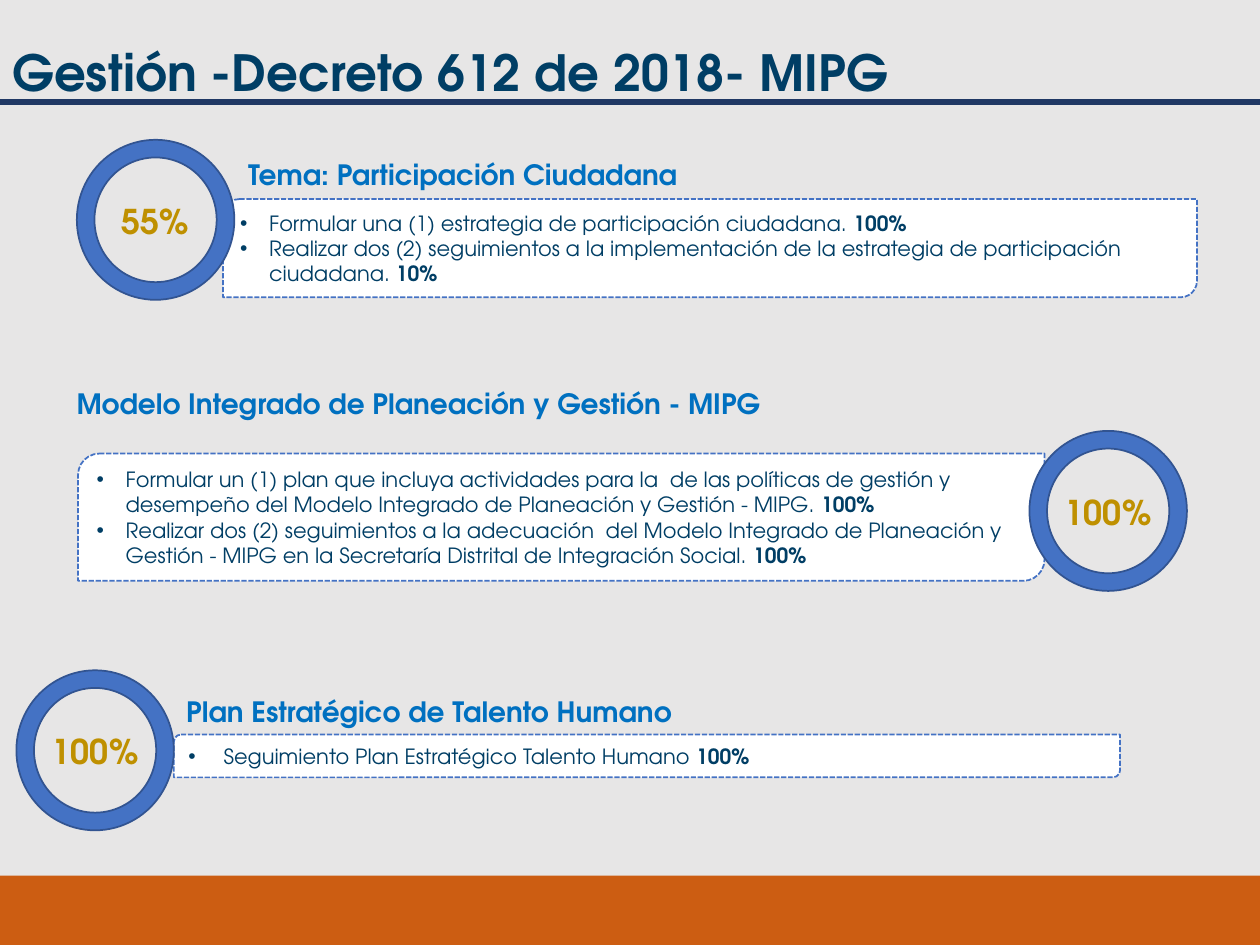
from lxml.etree import SubElement
from pptx import Presentation
from pptx.dml.color import RGBColor
from pptx.enum.dml import MSO_LINE
from pptx.enum.shapes import MSO_CONNECTOR, MSO_SHAPE
from pptx.enum.text import MSO_ANCHOR, PP_ALIGN
from pptx.oxml.ns import qn
from pptx.util import Inches, Pt

PALE_GREY = RGBColor(0xE7, 0xE6, 0xE6)
WHITE = RGBColor(0xFF, 0xFF, 0xFF)
ORANGE = RGBColor(0xCC, 0x5D, 0x12)
NAVY = RGBColor(0x20, 0x38, 0x64)
DEEP_BLUE = RGBColor(0x00, 0x3E, 0x65)
BRIGHT_BLUE = RGBColor(0x00, 0x70, 0xC0)
RING_BLUE = RGBColor(0x44, 0x72, 0xC4)
RING_EDGE = RGBColor(0x32, 0x54, 0x91)
GOLD = RGBColor(0xBF, 0x90, 0x00)

COLUMNS, ROWS = 100, 75
RING_COLUMNS, RING_ROWS = 12.5, 12.7
HEADING_ROWS = 3.7

TOPICS = [
    {
        "heading": ("Tema: Participación Ciudadana", 18.7, 12, 71.5),
        "ring": ("55%", 6.1, 11.1),
        "box": (17.7, 15.8, 77.3, 7.8),
        "indent": 0.23,
        "goals": [
            ("Formular una (1) estrategia de participación ciudadana. ", "100%"),
            ("Realizar dos (2) seguimientos a la implementación de la estrategia "
             "de participación ciudadana. ", "10%"),
        ],
    },
    {
        "heading": ("Modelo Integrado de Planeación y Gestión - MIPG", 5.1, 30.2, 80),
        "ring": ("100%", 81.7, 34.2),
        "box": (6.2, 36, 76.7, 10.1),
        "indent": 0.23,
        "goals": [
            ("Formular un (1) plan que incluya actividades para la  de las políticas "
             "de gestión y desempeño del Modelo Integrado de Planeación y Gestión - MIPG. ",
             "100%"),
            ("Realizar dos (2) seguimientos a la adecuación  del Modelo Integrado de "
             "Planeación y Gestión - MIPG en la Secretaría Distrital de Integración Social. ",
             "100%"),
        ],
    },
    {
        "heading": ("Plan Estratégico de Talento Humano", 13.8, 54.6, 64),
        "ring": ("100%", 1.3, 53.2),
        "box": (13.8, 58.3, 75.1, 3.4),
        "indent": 0.28,
        "goals": [("Seguimiento Plan Estratégico Talento Humano ", "100%")],
    },
]


class SlideBuilder:
    font_name = "TeX Gyre Adventor"

    def __init__(self, presentation):
        self.column = presentation.slide_width / COLUMNS
        self.row = presentation.slide_height / ROWS
        self.slide = presentation.slides.add_slide(presentation.slide_layouts[6])
        self.slide.background.fill.solid()
        self.slide.background.fill.fore_color.rgb = PALE_GREY

    def place(self, left, top, width, height):
        return (round(left * self.column), round(top * self.row),
                round(width * self.column), round(height * self.row))

    def style(self, paragraph, size, color, bold=None):
        paragraph.font.name = self.font_name
        paragraph.font.size = Pt(size)
        paragraph.font.color.rgb = color
        paragraph.font.bold = bold

    def shape(self, kind, area, fill, edge=None, parent=None):
        shape = (parent or self.slide).shapes.add_shape(kind, *self.place(*area))
        shape.shadow.inherit = False
        shape.fill.solid()
        shape.fill.fore_color.rgb = fill
        if edge is None:
            shape.line.fill.background()
        else:
            shape.line.color.rgb = edge
            shape.line.width = Pt(1)
        return shape

    def text(self, wording, area, size, color, align=PP_ALIGN.LEFT,
             anchor=MSO_ANCHOR.TOP, parent=None):
        frame = (parent or self.slide).shapes.add_textbox(*self.place(*area)).text_frame
        frame.word_wrap = True
        frame.vertical_anchor = anchor
        paragraph = frame.paragraphs[0]
        paragraph.text = wording
        paragraph.alignment = align
        self.style(paragraph, size, color, bold=True)

    def rule(self, row):
        left, top, width, _ = self.place(0, row, COLUMNS, 0)
        rule = self.slide.shapes.add_connector(
            MSO_CONNECTOR.STRAIGHT, left, top, left + width, top)
        rule.line.color.rgb = NAVY
        rule.line.width = Pt(3)
        SubElement(rule.element.spPr, qn("a:effectLst"))

    def goal_box(self, goals, area, indent):
        box = self.shape(MSO_SHAPE.ROUND_2_DIAG_RECTANGLE, area, WHITE, RING_BLUE)
        box.line.dash_style = MSO_LINE.SQUARE_DOT
        frame = box.text_frame
        frame.word_wrap = True
        frame.vertical_anchor = MSO_ANCHOR.MIDDLE
        for index, (goal, progress) in enumerate(goals):
            paragraph = frame.add_paragraph() if index else frame.paragraphs[0]
            paragraph.alignment = PP_ALIGN.LEFT
            self.style(paragraph, 12, DEEP_BLUE)
            paragraph.add_run().text = goal
            result = paragraph.add_run()
            result.text = progress
            result.font.bold = True
            self.bullet(paragraph, indent)

    def bullet(self, paragraph, indent):
        properties = paragraph.font._element.getparent()
        properties.set("marL", str(Inches(indent)))
        properties.set("indent", str(-Inches(indent)))
        bullet_font = properties.makeelement(qn("a:buFont"), {"typeface": "Arial"})
        bullet_mark = properties.makeelement(qn("a:buChar"), {"char": "•"})
        properties.insert(0, bullet_font)
        properties.insert(1, bullet_mark)

    def ring(self, progress, left, top):
        group = self.slide.shapes.add_group_shape()
        donut = self.shape(MSO_SHAPE.DONUT, (left, top, RING_COLUMNS, RING_ROWS),
                           RING_BLUE, RING_EDGE, group)
        donut.adjustments[0] = 0.112
        self.text(progress, (left, top + 4.3, RING_COLUMNS, 4.3), 19.5, GOLD,
                  PP_ALIGN.CENTER, parent=group)


def main():
    presentation = Presentation()
    presentation.slide_width = Inches(10)
    presentation.slide_height = Inches(7.5)
    builder = SlideBuilder(presentation)
    builder.shape(MSO_SHAPE.RECTANGLE, (0, 69.5, COLUMNS, 5.5), ORANGE)
    builder.rule(8.1)
    builder.text("Gestión -Decreto 612 de 2018- MIPG", (0, 3.1, 84.4, 5.1),
                 28.5, DEEP_BLUE, anchor=MSO_ANCHOR.MIDDLE)
    for topic in TOPICS:
        heading, left, top, width = topic["heading"]
        builder.goal_box(topic["goals"], topic["box"], topic["indent"])
        builder.text(heading, (left, top, width, HEADING_ROWS), 16, BRIGHT_BLUE)
        builder.ring(*topic["ring"])
    presentation.save("out.pptx")


if __name__ == "__main__":
    main()
